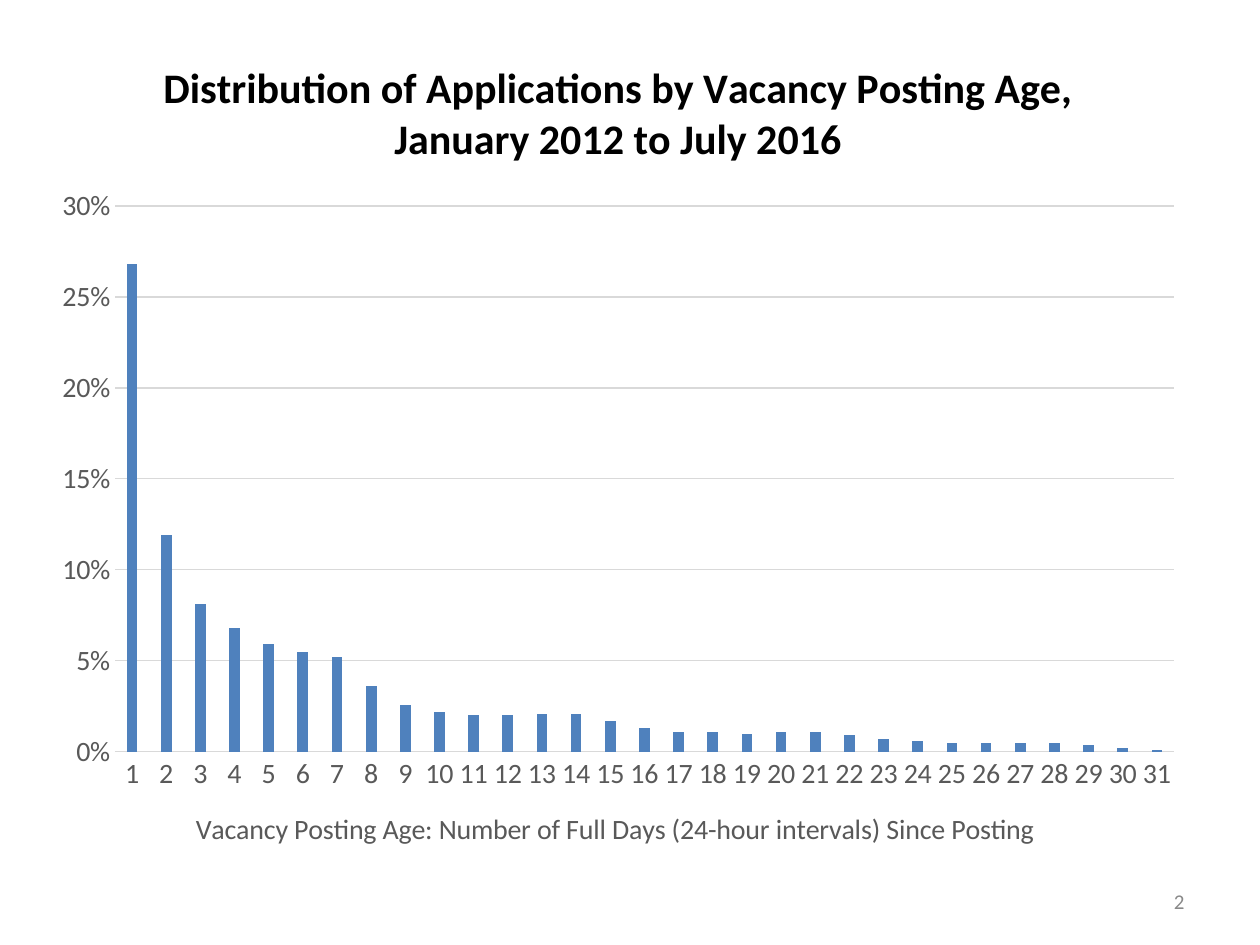
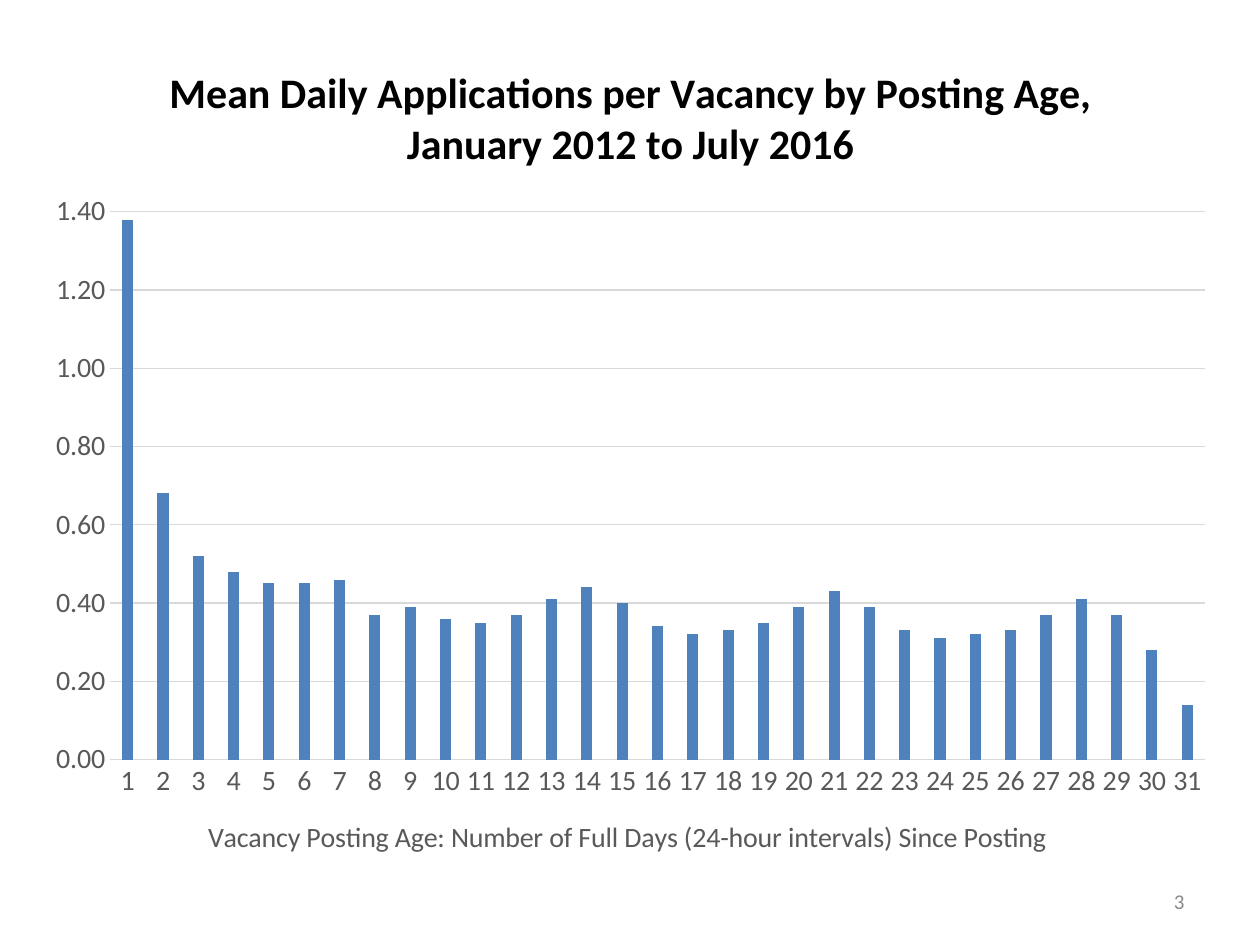
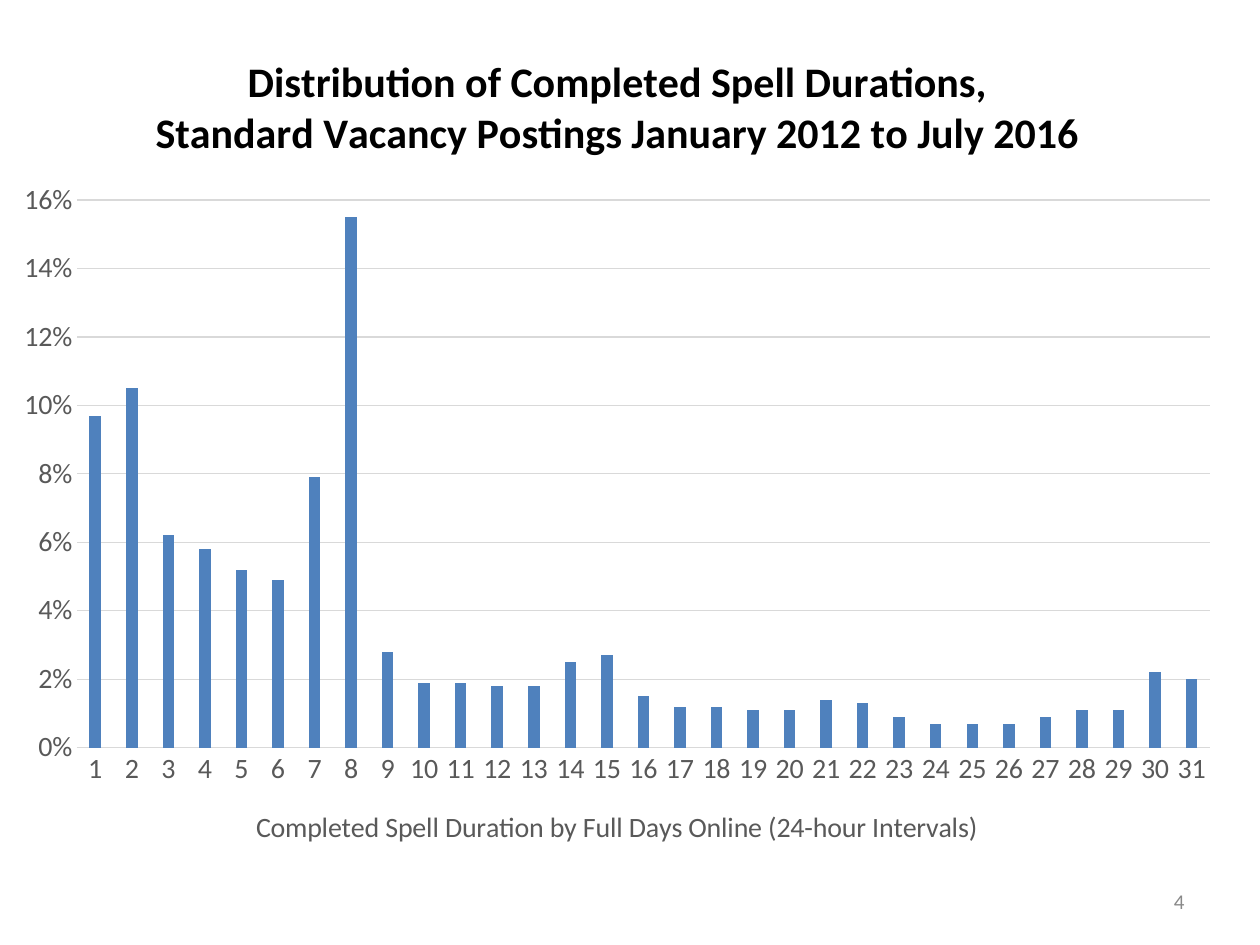
import dataclasses
import typing

import lxml.etree
import pptx
import pptx.chart.data
import pptx.dml.color
import pptx.enum.chart
import pptx.enum.text
import pptx.oxml.ns
import pptx.util

Pt = pptx.util.Pt
RGBColor = pptx.dml.color.RGBColor

BLACK = RGBColor(0x00, 0x00, 0x00)
AXIS_GRAY = RGBColor(0x59, 0x59, 0x59)
GRID_GRAY = RGBColor(0xD9, 0xD9, 0xD9)
NUMBER_GRAY = RGBColor(0x89, 0x89, 0x89)
BAR_BLUE = RGBColor(0x4F, 0x81, 0xBD)
FONT = "Calibri"
DAYS = [str(day) for day in range(1, 32)]
POSTING_AGE = "Vacancy Posting Age: Number of Full Days (24-hour intervals) Since Posting"
SPELL_DURATION = "Completed Spell Duration by Full Days Online (24-hour Intervals)"


class Box(typing.NamedTuple):
    left: float
    top: float
    width: float
    height: float


@dataclasses.dataclass(frozen=True)
class Histogram:
    page: int
    title: str
    days_title: str
    days_title_at: tuple[float, float]
    frame: Box
    plot: Box
    number_format: str
    maximum: float
    step: float
    values: list[float]


HISTOGRAMS = [
    Histogram(
        2, "Distribution of Applications by Vacancy Posting Age,\nJanuary 2012 to July 2016",
        POSTING_AGE, (109, 460),
        Box(22.32, 19.44, 661.68, 481.68), Box(65.7, 117.7, 605.2, 312),
        "0%", 0.3, 0.05,
        [0.268, 0.119, 0.081, 0.068, 0.059, 0.055, 0.052, 0.036, 0.026, 0.022, 0.02,
         0.02, 0.021, 0.021, 0.017, 0.013, 0.011, 0.011, 0.01, 0.011, 0.011, 0.009,
         0.007, 0.006, 0.005, 0.005, 0.005, 0.005, 0.004, 0.002, 0.001],
    ),
    Histogram(
        3, "Mean Daily Applications per Vacancy by Posting Age,\nJanuary 2012 to July 2016",
        POSTING_AGE, (116, 464.5),
        Box(18.72, 22.32, 683.28, 482.4), Box(62.9, 121.1, 625.7, 313),
        "0.00", 1.4, 0.2,
        [1.38, 0.68, 0.52, 0.48, 0.45, 0.45, 0.46, 0.37, 0.39, 0.36, 0.35, 0.37, 0.41,
         0.44, 0.4, 0.34, 0.32, 0.33, 0.35, 0.39, 0.43, 0.39, 0.33, 0.31, 0.32, 0.33,
         0.37, 0.41, 0.37, 0.28, 0.14],
    ),
    Histogram(
        4, "Distribution of Completed Spell Durations,\n"
        "Standard Vacancy Postings January 2012 to July 2016",
        SPELL_DURATION, (143.4, 458.8),
        Box(0, 15.84, 705.6, 485.28), Box(44, 114.3, 647.4, 313),
        "0%", 0.16, 0.02,
        [0.097, 0.105, 0.062, 0.058, 0.052, 0.049, 0.079, 0.155, 0.028, 0.019, 0.019,
         0.018, 0.018, 0.025, 0.027, 0.015, 0.012, 0.012, 0.011, 0.011, 0.014, 0.013,
         0.009, 0.007, 0.007, 0.007, 0.009, 0.011, 0.011, 0.022, 0.02],
    ),
]


def set_font(font, *, size: float, color: RGBColor, bold: bool = False) -> None:
    font.name = FONT
    font.size = Pt(size)
    font.bold = bold
    font.color.rgb = color


def write_text(text_frame, text: str, *, size: float, color: RGBColor,
               bold: bool = False, align=None) -> None:
    text_frame.text = text
    for paragraph in text_frame.paragraphs:
        if align is not None:
            paragraph.alignment = align
        for run in paragraph.runs:
            set_font(run.font, size=size, color=color, bold=bold)


def place_in_chart(element, position: int, frame: Box, left: float, top: float,
                   size: tuple[float, float] | None = None) -> None:
    qn = pptx.oxml.ns.qn
    for old_layout in element.findall(qn("c:layout")):
        element.remove(old_layout)
    layout = lxml.etree.Element(qn("c:layout"))
    manual = lxml.etree.SubElement(layout, qn("c:manualLayout"))
    settings = {"xMode": "edge", "yMode": "edge",
                "x": (left - frame.left) / frame.width,
                "y": (top - frame.top) / frame.height}
    if size:
        settings = {"layoutTarget": "inner", **settings,
                    "w": size[0] / frame.width, "h": size[1] / frame.height}
    for tag, value in settings.items():
        lxml.etree.SubElement(manual, qn(f"c:{tag}")).set("val", str(value))
    element.insert(position, layout)


def style_axis(axis) -> None:
    axis.major_tick_mark = pptx.enum.chart.XL_TICK_MARK.NONE
    axis.minor_tick_mark = pptx.enum.chart.XL_TICK_MARK.NONE
    set_font(axis.tick_labels.font, size=16, color=AXIS_GRAY)


def style_line(line) -> None:
    line.color.rgb = GRID_GRAY
    line.width = Pt(0.75)


def add_histogram(slide, histogram: Histogram) -> None:
    data = pptx.chart.data.CategoryChartData(number_format=histogram.number_format)
    data.categories = DAYS
    data.add_series("Series 1", histogram.values)
    frame = histogram.frame
    chart = slide.shapes.add_chart(
        pptx.enum.chart.XL_CHART_TYPE.COLUMN_CLUSTERED, *map(Pt, frame), data).chart
    set_font(chart.font, size=16, color=BLACK)
    chart.has_legend = False
    chart.has_title = True
    chart.chart_title.include_in_layout = False
    write_text(chart.chart_title.text_frame, histogram.title, size=24, color=BLACK, bold=True)

    bars = chart.plots[0]
    bars.gap_width = 219
    bars.overlap = -27
    bars.vary_by_categories = False
    fill = bars.series[0].format.fill
    fill.solid()
    fill.fore_color.rgb = BAR_BLUE

    days = chart.category_axis
    style_axis(days)
    style_line(days.format.line)
    days.has_major_gridlines = False
    write_text(days.axis_title.text_frame, histogram.days_title, size=16, color=AXIS_GRAY)

    share = chart.value_axis
    style_axis(share)
    share.format.line.fill.background()
    style_line(share.major_gridlines.format.line)
    share.minimum_scale = 0
    share.maximum_scale = histogram.maximum
    share.major_unit = histogram.step
    share.tick_labels.number_format = histogram.number_format
    share.tick_labels.number_format_is_linked = False

    plot_area = chart.element.xpath("c:chart/c:plotArea")[0]
    days_title = plot_area.xpath("c:catAx/c:title")[0]
    plot = histogram.plot
    place_in_chart(plot_area, 0, frame, plot.left, plot.top, (plot.width, plot.height))
    place_in_chart(days_title, 1, frame, *histogram.days_title_at)


def add_page_number(slide, page: int) -> None:
    text_frame = slide.shapes.add_textbox(Pt(516), Pt(500.5), Pt(168), Pt(28.75)).text_frame
    text_frame.word_wrap = True
    text_frame.vertical_anchor = pptx.enum.text.MSO_ANCHOR.MIDDLE
    write_text(text_frame, str(page), size=12, color=NUMBER_GRAY,
               align=pptx.enum.text.PP_ALIGN.RIGHT)


def main() -> None:
    presentation = pptx.Presentation()
    presentation.slide_width = Pt(720)
    presentation.slide_height = Pt(540)
    for histogram in HISTOGRAMS:
        slide = presentation.slides.add_slide(presentation.slide_layouts[6])
        add_page_number(slide, histogram.page)
        add_histogram(slide, histogram)
    presentation.save("out.pptx")


if __name__ == "__main__":
    main()
